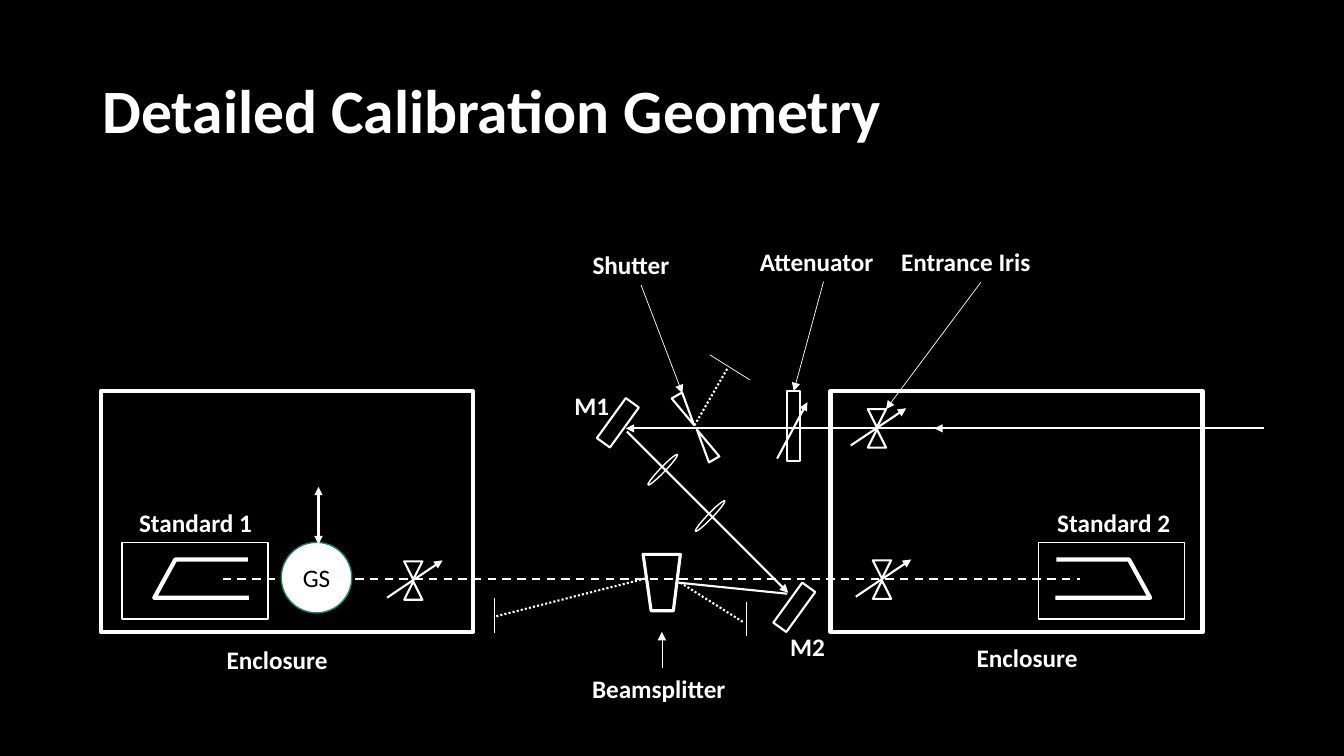
import dataclasses
import typing

import lxml.etree
import pptx
import pptx.dml.color
import pptx.enum.dml
import pptx.enum.shapes
import pptx.enum.text
import pptx.oxml.ns
import pptx.slide
import pptx.util

Pt = pptx.util.Pt
Kind = pptx.enum.shapes.MSO_SHAPE
Dash = pptx.enum.dml.MSO_LINE
Align = pptx.enum.text.PP_ALIGN
Anchor = pptx.enum.text.MSO_ANCHOR
AutoSize = pptx.enum.text.MSO_AUTO_SIZE
COLOURS = {"background": "000000", "ink": "FFFFFF", "sphere_text": "000000", "sphere_line": "1E8168"}
FONT = "Calibri"
Point = tuple[float, float]


# All lengths below are in points
@dataclasses.dataclass
class Outline:
    left: float
    top: float
    width: float
    height: float
    weight: float = 1.5
    kind: typing.Any = Kind.RECTANGLE
    rotation: float = 0
    fill: str | None = None
    colour: str = "ink"


@dataclasses.dataclass
class Label:
    text: str
    left: float
    top: float
    width: float


@dataclasses.dataclass
class Ray:
    start: Point
    end: Point
    weight: float = 1.5
    dash: typing.Any = None
    arrows: tuple[str, ...] = ()


ARROW = ("tailEnd",)
LABEL_HEIGHT = 29.1
ENCLOSURES = [Outline(left, 279.4, 265.7, 172.1, 3) for left in (72, 593.3)]
STANDARD_BOXES = [Outline(left, 387.4, 104.4, 54.7, 1) for left in (87.1, 741.6)]
SHUTTER = [
    Outline(499.7, 305.3, 8.6, 24.5, kind=Kind.ISOSCELES_TRIANGLE, rotation=329.9),
    Outline(485.3, 280.8, 8.6, 24.5, kind=Kind.ISOSCELES_TRIANGLE, rotation=149.9),
]
MIRRORS = [Outline(left, top, 11.5, 35.3, rotation=35.9) for left, top in ((435.6, 284.4), (561.6, 416.2))]
LENSES = [
    Outline(left, top, 3.6, 30.2, 1, Kind.OVAL, 43.9) for left, top in ((471.6, 320.4), (505.4, 353.5))
]
ATTENUATOR = Outline(562.3, 279.4, 9.4, 49.7)
SPHERE = Outline(200.9, 387.4, 50.4, 50.4, 1, Kind.OVAL, fill="ink", colour="sphere_line")
IRIS_CENTRES = [(626.4, 306), (630, 414), (295.2, 414.7)]

BEAMSPLITTER = [(459.4, 396), (465.1, 436.3), (481, 436.3), (486, 396)]
STANDARD_1 = [(177.1, 399.6), (125.3, 399.6), (110.2, 427), (177.8, 427)]
MIRROR_SUM = 931.7  # x of standard 1 plus x of standard 2
STANDARD_2 = [(MIRROR_SUM - x, y) for x, y in STANDARD_1]

RAYS = [
    Ray((902.9, 306), (447.1, 306), arrows=ARROW),
    Ray((673.9, 306), (667.4, 306), arrows=ARROW),
    Ray((447.8, 308.2), (563, 423.4), arrows=ARROW),
    Ray((555.1, 327.6), (576.7, 287.3), arrows=ARROW),
    Ray((484.6, 416.2), (562.3, 424.1)),
    Ray((159.1, 413.3), (771.8, 413.3), dash=Dash.DASH),
    # Stray reflections and their beam dumps
    Ray((460.8, 413.3), (352.8, 440.6), dash=Dash.ROUND_DOT),
    Ray((486, 416.2), (530.6, 444.2), dash=Dash.ROUND_DOT),
    Ray((496.1, 303.8), (519.8, 262.8), dash=Dash.ROUND_DOT),
    Ray((352.8, 427), (352.8, 452.2), 0.5),
    Ray((532.8, 429.8), (532.8, 454.3), 0.5),
    Ray((506.9, 253.4), (535.7, 271.4), 0.5),
]
SPHERE_TRAVEL = Ray((227.5, 388.8), (227.5, 347.8), arrows=("headEnd", "tailEnd"))

LABELS = [
    Label("Shutter", 416.2, 174.6, 83.5),
    Label("Attenuator", 535.7, 172.1, 105.1),
    Label("Entrance Iris", 636.5, 172.6, 128.2),
    Label("Beamsplitter", 415.8, 477.4, 114),
    Label("M1", 403.2, 275, 49.7),
    Label("M2", 557.3, 447.1, 49.7),
    Label("Standard 1", 92.2, 359.1, 128.2),
    Label("Standard 2", 748.1, 358.8, 128.2),
    Label("Enclosure", 154.8, 456.7, 114.5),
    Label("Enclosure", 690.5, 455.5, 114.5),
]
# Label, tip of its pointer, side of the label it leaves from
POINTERS = [
    ("Shutter", (487.4, 280.8), 2),
    ("Attenuator", (567, 279.4), 2),
    ("Entrance Iris", (632.9, 292.3), 2),
    ("Beamsplitter", (472.8, 451.4), 0),
]


def rgb(name: str) -> pptx.dml.color.RGBColor:
    return pptx.dml.color.RGBColor.from_string(COLOURS[name])


def write(shape, text: str, size: float = 18, colour: str = "ink", bold: bool = True,
          align=Align.LEFT, anchor=Anchor.TOP, auto_size=AutoSize.NONE, spacing: float = 1.0) -> None:
    frame = shape.text_frame
    frame.word_wrap = True
    frame.auto_size = auto_size
    frame.vertical_anchor = anchor
    para = frame.paragraphs[0]
    para.alignment, para.line_spacing = align, spacing
    span = para.add_run()
    span.text = text
    span.font.name, span.font.size, span.font.bold = FONT, Pt(size), bold
    span.font.color.rgb = rgb(colour)


def style(shape, weight: float, fill: str | None = None, colour: str = "ink") -> None:
    shape.shadow.inherit = False
    if fill:
        shape.fill.solid()
        shape.fill.fore_color.rgb = rgb(fill)
    else:
        shape.fill.background()
    shape.line.color.rgb = rgb(colour)
    shape.line.width = Pt(weight)


def draw_outline(page: pptx.slide.Slide, item: Outline):
    shape = page.shapes.add_shape(item.kind, Pt(item.left), Pt(item.top), Pt(item.width), Pt(item.height))
    shape.rotation = item.rotation
    style(shape, item.weight, item.fill, item.colour)
    return shape


def draw_polygon(page: pptx.slide.Slide, points: list[Point], weight: float, close: bool) -> None:
    corners = [(Pt(x), Pt(y)) for x, y in points]
    builder = page.shapes.build_freeform(*corners[0])
    builder.add_line_segments(corners[1:], close=close)
    style(builder.convert_to_shape(), weight)


def draw_ray(page: pptx.slide.Slide, ray: Ray):
    connector = page.shapes.add_connector(
        pptx.enum.shapes.MSO_CONNECTOR.STRAIGHT, *(Pt(value) for value in ray.start + ray.end))
    connector.line.color.rgb = rgb("ink")
    connector.line.width = Pt(ray.weight)
    if ray.dash:
        connector.line.dash_style = ray.dash
    properties = connector._element.spPr
    outline = properties.find(pptx.oxml.ns.qn("a:ln"))
    for tag in ray.arrows:
        lxml.etree.SubElement(outline, pptx.oxml.ns.qn(f"a:{tag}"), type="triangle")
    lxml.etree.SubElement(properties, pptx.oxml.ns.qn("a:effectLst"))
    return connector


def draw_iris(page: pptx.slide.Slide, centre: Point) -> None:
    x, y = centre
    for top, rotation in ((y + 0.7, 0), (y - 13.7, 180)):
        draw_outline(page, Outline(x - 6.5, top, 13, 13, kind=Kind.ISOSCELES_TRIANGLE, rotation=rotation))
    draw_ray(page, Ray((x - 18.7, y + 12.2), (x + 20.9, y - 14.4), arrows=ARROW))


def draw_label(page: pptx.slide.Slide, label: Label):
    box = page.shapes.add_textbox(Pt(label.left), Pt(label.top), Pt(label.width), Pt(LABEL_HEIGHT))
    write(box, label.text, auto_size=AutoSize.SHAPE_TO_FIT_TEXT)
    return box


def main() -> None:
    deck = pptx.Presentation()
    deck.slide_width, deck.slide_height = Pt(960), Pt(540)
    page = deck.slides.add_slide(deck.slide_layouts.get_by_name("Title Only"))
    page.background.fill.solid()
    page.background.fill.fore_color.rgb = rgb("background")

    # Title
    title = page.shapes.title
    title.left, title.top, title.width, title.height = Pt(66), Pt(28.75), Pt(828), Pt(104.4)
    write(title, "Detailed Calibration Geometry", size=44, anchor=Anchor.MIDDLE, spacing=0.9)

    # Enclosures and optics
    for item in ENCLOSURES + STANDARD_BOXES + SHUTTER + MIRRORS + LENSES:
        draw_outline(page, item)
    attenuator = draw_outline(page, ATTENUATOR)
    draw_polygon(page, BEAMSPLITTER, 2.25, close=True)
    for points in (STANDARD_1, STANDARD_2):
        draw_polygon(page, points, 3, close=False)

    # Beams and irises
    for ray in RAYS:
        draw_ray(page, ray)
    for centre in IRIS_CENTRES:
        draw_iris(page, centre)

    # Movable sphere, in front of the beam
    sphere = draw_outline(page, SPHERE)
    write(sphere, "GS", colour="sphere_text", bold=False, align=Align.CENTER, anchor=Anchor.MIDDLE)
    draw_ray(page, SPHERE_TRAVEL)

    # Labels and their pointers
    boxes = {label.text: draw_label(page, label) for label in LABELS}
    for name, tip, side in POINTERS:
        pointer = draw_ray(page, Ray(tip, tip, 0.5, arrows=ARROW))
        pointer.begin_connect(boxes[name], side)
        if name == "Attenuator":
            pointer.end_connect(attenuator, 0)

    deck.save("out.pptx")


if __name__ == "__main__":
    main()
